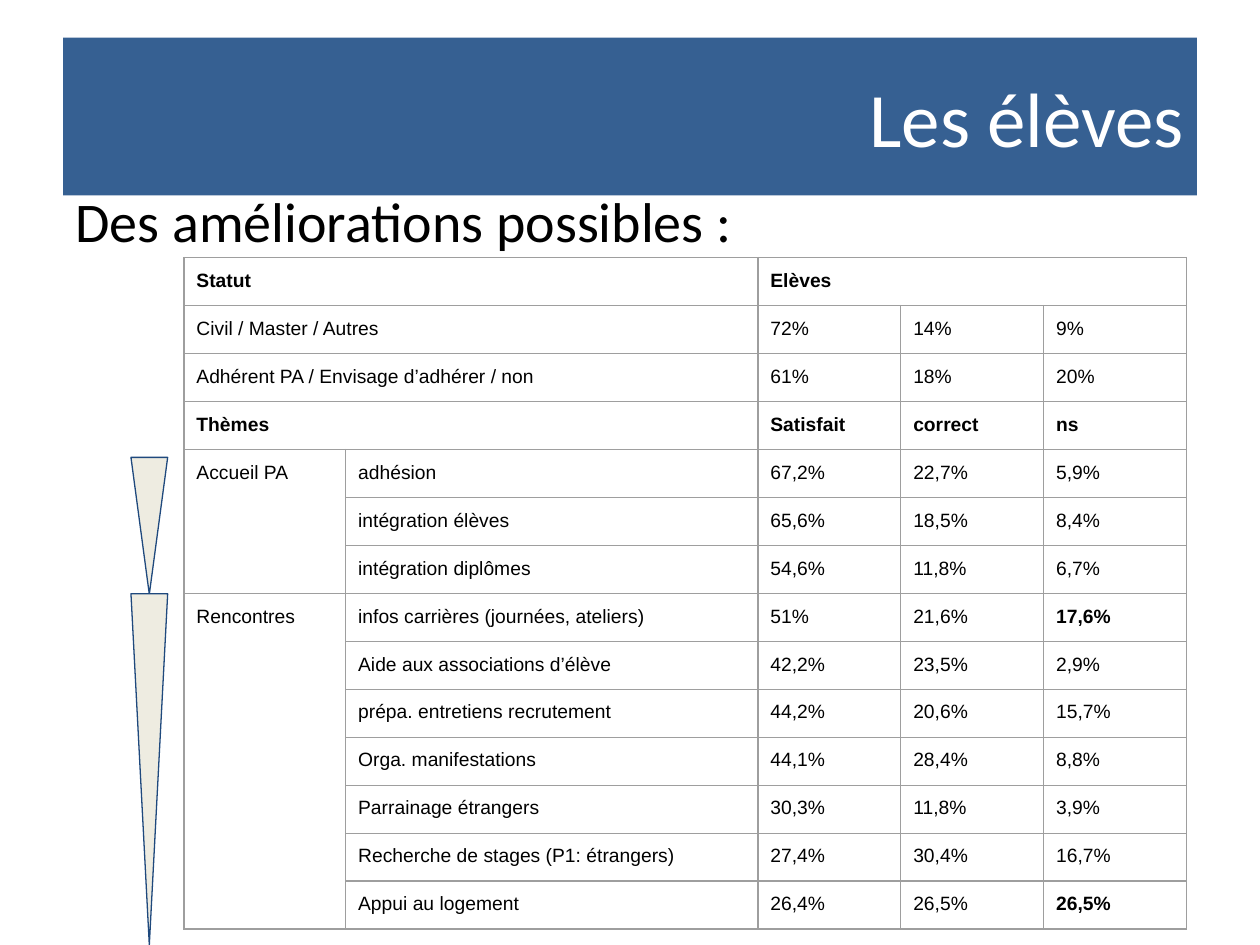
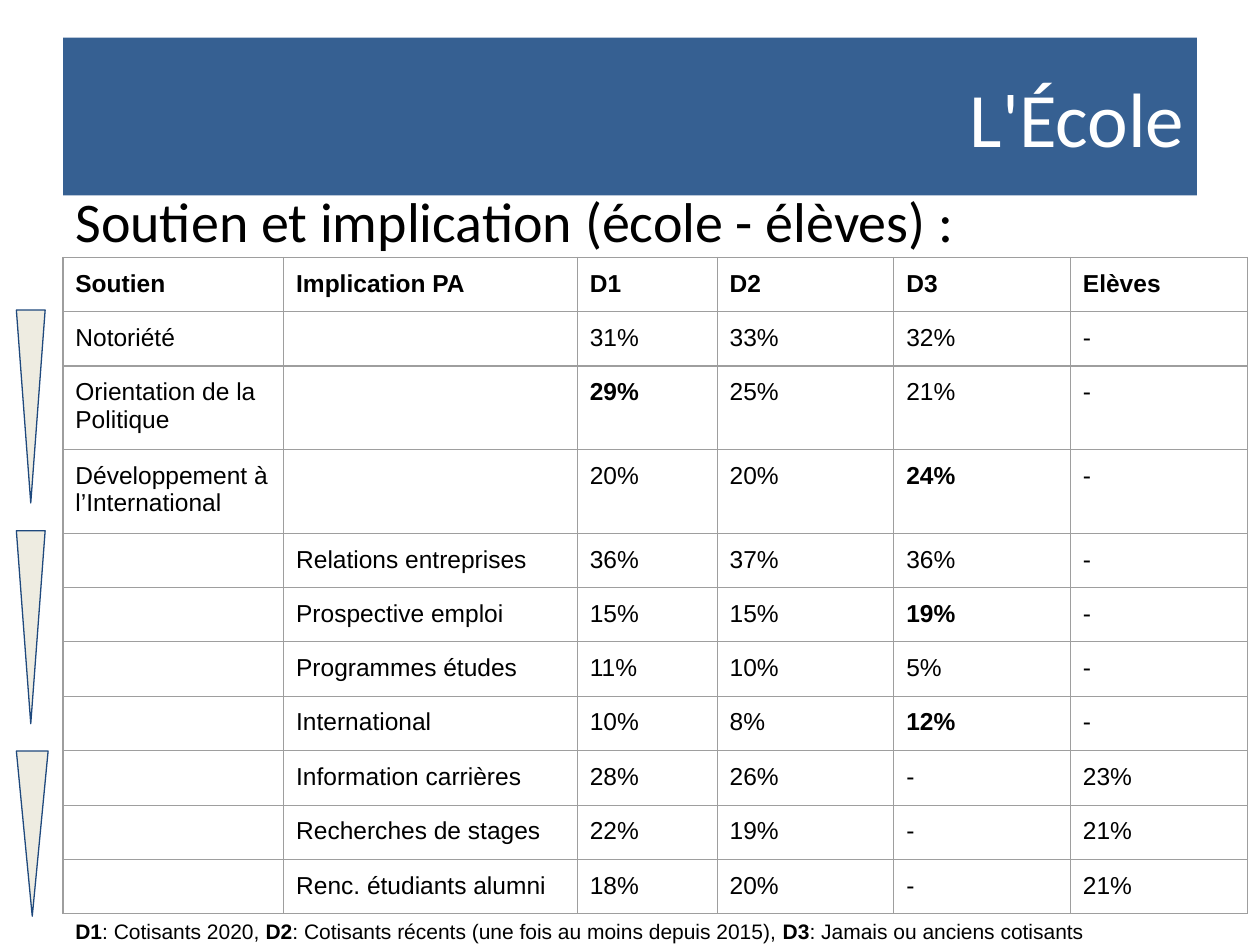
from lxml import etree
from pptx import Presentation
from pptx.dml.color import RGBColor as RGB
from pptx.enum.shapes import MSO_SHAPE as SHAPE
from pptx.enum.text import MSO_ANCHOR as ANCHOR, MSO_AUTO_SIZE as AUTO_SIZE, PP_ALIGN as ALIGN
from pptx.oxml import parse_xml
from pptx.oxml.ns import nsdecls
from pptx.util import Cm, Pt

COLOURS = {
    "band": "366092", "title": "FFFFFF", "text": "000000",
    "grid": "9E9E9E", "wedge": "EEECE1", "wedge_line": "1F497D",
}
TITLE_BOX = {"left": Cm(1.27), "top": Cm(0.76), "width": Cm(22.86), "height": Cm(3.18)}
TITLE_FRAME = {"vertical_anchor": ANCHOR.MIDDLE, "word_wrap": True, "auto_size": AUTO_SIZE.NONE}
CELL_MARGINS = {f"margin_{side}": Cm(0.25) for side in ("left", "right", "top", "bottom")}
TITLE_FONT = {"name": "Calibri", "size": Pt(44), "bold": False}
HEADING_FONT = {"name": "Calibri", "size": Pt(32), "bold": False}
NOTE_FONT = {"name": "Arial", "size": Pt(12)}

slides = [
    {
        "title": "Les élèves",
        "heading": "Des améliorations possibles :",
        "left": 3.71,
        "size": 11,
        "columns": [3.26, 8.31, 2.88, 2.88, 2.88],
        "heights": [0.94] * 14,
        "merges": [(row, 0, row, 1) for row in range(4)]
                  + [(0, 2, 0, 4), (4, 0, 6, 0), (7, 0, 13, 0)],
        "rows": [
            ["*Statut", "", "*Elèves", "", ""],
            ["Civil / Master / Autres", "", "72%", "14%", "9%"],
            ["Adhérent PA / Envisage d’adhérer / non", "", "61%", "18%", "20%"],
            ["*Thèmes", "", "*Satisfait", "*correct", "*ns"],
            ["Accueil PA", "adhésion", "67,2%", "22,7%", "5,9%"],
            ["", "intégration élèves", "65,6%", "18,5%", "8,4%"],
            ["", "intégration diplômes", "54,6%", "11,8%", "6,7%"],
            ["Rencontres", "infos carrières (journées, ateliers)", "51%", "21,6%", "*17,6%"],
            ["", "Aide aux associations d’élève", "42,2%", "23,5%", "2,9%"],
            ["", "prépa. entretiens recrutement", "44,2%", "20,6%", "15,7%"],
            ["", "Orga. manifestations", "44,1%", "28,4%", "8,8%"],
            ["", "Parrainage étrangers", "30,3%", "11,8%", "3,9%"],
            ["", "Recherche de stages (P1: étrangers)", "27,4%", "30,4%", "16,7%"],
            ["", "Appui au logement", "26,4%", "26,5%", "*26,5%"],
        ],
        "wedges": [(2.64, 9.22, 0.74, 2.76), (2.64, 11.97, 0.74, 7.08)],
        "note": [],
    },
    {
        "title": "L'École",
        "heading": "Soutien et implication (école - élèves) :",
        "left": 1.27,
        "size": 14,
        "columns": [4.45, 5.92, 2.82, 3.56, 3.56, 3.56],
        "heights": [1.08, 1.07, 1.62, 1.62, 1.06, 1.06, 1.06, 1.1, 1.1, 1.06, 1.06],
        "merges": [],
        "rows": [
            ["*Soutien", "*Implication PA", "*D1", "*D2", "*D3", "*Elèves"],
            ["Notoriété", "", "31%", "33%", "32%", "-"],
            ["Orientation de la Politique", "", "*29%", "25%", "21%", "-"],
            ["Développement à l’International", "", "20%", "20%", "*24%", "-"],
            ["", "Relations entreprises", "36%", "37%", "36%", "-"],
            ["", "Prospective emploi", "15%", "15%", "*19%", "-"],
            ["", "Programmes études", "11%", "10%", "5%", "-"],
            ["", "International", "10%", "8%", "*12%", "-"],
            ["", "Information carrières", "28%", "26%", "-", "23%"],
            ["", "Recherches de stages", "22%", "19%", "-", "21%"],
            ["", "Renc. étudiants alumni", "18%", "20%", "-", "21%"],
        ],
        "wedges": [(0.33, 6.25, 0.58, 3.89), (0.33, 10.7, 0.58, 3.89), (0.33, 15.14, 0.64, 3.33)],
        "note": ["*D1", ": Cotisants 2020,", "* D2",
                 ": Cotisants récents (une fois au moins depuis 2015),",
                 "* D3", ": Jamais ou anciens cotisants"],
    },
]


def set_format(target, values):
    for name, value in values.items():
        setattr(target, name, value)


def add_run(paragraph, text, font, colour="text"):
    run = paragraph.add_run()
    run.text = text.removeprefix("*")
    set_format(run.font, {"bold": text.startswith("*"), **font})
    run.font.color.rgb = RGB.from_string(COLOURS[colour])


presentation = Presentation()
presentation.slide_width, presentation.slide_height = Cm(25.4), Cm(19.05)

for content in slides:
    slide = presentation.slides.add_slide(presentation.slide_layouts[5])

    title = slide.shapes.title
    set_format(title, TITLE_BOX)
    set_format(title.text_frame, TITLE_FRAME)
    title.fill.solid()
    title.fill.fore_color.rgb = RGB.from_string(COLOURS["band"])
    title_paragraph = title.text_frame.paragraphs[0]
    title_paragraph.alignment = ALIGN.RIGHT
    add_run(title_paragraph, content["title"], TITLE_FONT, "title")

    lines = [([content["heading"]], HEADING_FONT, 3.63, 1.5)]
    if content["note"]:
        lines.append((content["note"], NOTE_FONT, 18.39, 0.66))
    for texts, font, top, height in lines:
        box = slide.shapes.add_textbox(Cm(1.27), Cm(top), Cm(22.86), Cm(height))
        box.text_frame.word_wrap = True
        for text in texts:
            add_run(box.text_frame.paragraphs[0], text, font)

    rows, columns, heights = content["rows"], content["columns"], content["heights"]
    table = slide.shapes.add_table(
        len(rows), len(columns), Cm(content["left"]), Cm(5.19),
        Cm(sum(columns)), Cm(sum(heights))).table
    set_format(table, {"first_row": False, "horz_banding": False})
    for column, width in zip(table.columns, columns):
        column.width = Cm(width)
    for row, height in zip(table.rows, heights):
        row.height = Cm(height)

    cell_font = {"name": "Arial", "size": Pt(content["size"])}
    for row, texts in zip(table.rows, rows):
        for cell, text in zip(row.cells, texts):
            cell.fill.background()
            if text:
                set_format(cell, CELL_MARGINS)
                add_run(cell.text_frame.paragraphs[0], text, cell_font)
            properties = cell._tc.get_or_add_tcPr()
            for position, side in enumerate(("lnL", "lnR", "lnT", "lnB")):
                border = parse_xml(f'<a:{side} {nsdecls("a")} w="9525"/>')
                fill = etree.SubElement(border, border.tag.replace(side, "solidFill"))
                etree.SubElement(fill, border.tag.replace(side, "srgbClr"), val=COLOURS["grid"])
                properties.insert(position, border)
    for top, left, bottom, right in content["merges"]:
        table.cell(top, left).merge(table.cell(bottom, right))

    for left, top, width, height in content["wedges"]:
        wedge = slide.shapes.add_shape(
            SHAPE.ISOSCELES_TRIANGLE, Cm(left), Cm(top), Cm(width), Cm(height))
        wedge.rotation = 180
        wedge.shadow.inherit = False
        wedge.fill.solid()
        wedge.fill.fore_color.rgb = RGB.from_string(COLOURS["wedge"])
        wedge.line.color.rgb = RGB.from_string(COLOURS["wedge_line"])
        wedge.line.width = Pt(0.75)

presentation.save("out.pptx")
